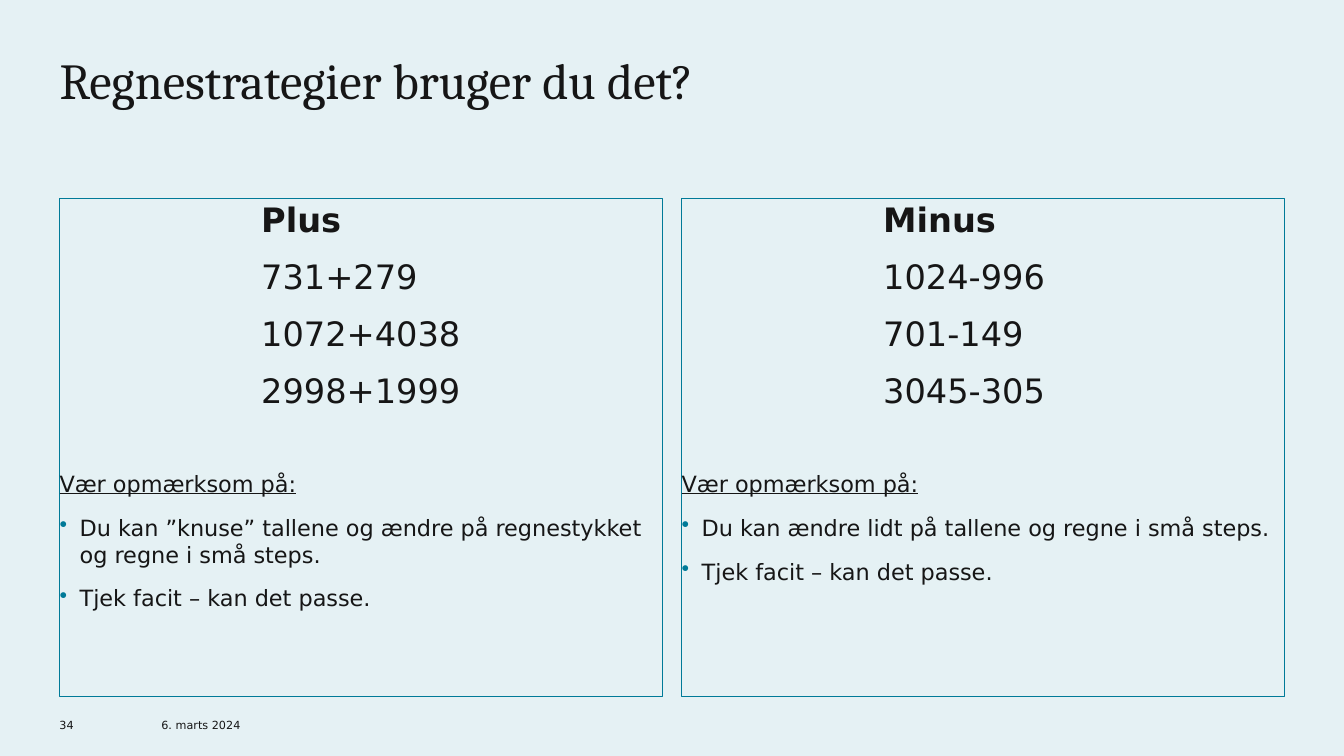
import dataclasses

import pptx
import pptx.dml.color
import pptx.enum.shapes
import pptx.enum.text
import pptx.oxml.ns
import pptx.slide
import pptx.text.text
import pptx.util
from lxml import etree
from pptx.util import Inches

INK = pptx.dml.color.RGBColor(0x16, 0x16, 0x16)
TEAL = pptx.dml.color.RGBColor(0x00, 0x7A, 0x98)
PALE = pptx.dml.color.RGBColor(0xE5, 0xF1, 0xF4)
SANS = "DejaVu Sans"
SERIF = "Cambria"
LEFT = 0.59
WIDTH = 5.98
GAP = 0.19


@dataclasses.dataclass
class Panel:
    head: str
    sums: list[str]
    tips: list[str]


@dataclasses.dataclass
class Label:
    text: str
    left: float
    top: float
    width: float
    height: float
    size: float
    face: str = SANS
    anchor: pptx.enum.text.MSO_ANCHOR = pptx.enum.text.MSO_ANCHOR.BOTTOM
    spacing: float = 1.0


PANELS = [
    Panel(
        "Plus",
        ["731+279", "1072+4038", "2998+1999"],
        [
            "Du kan ”knuse” tallene og ændre på regnestykket og regne i små steps.",
            "Tjek facit – kan det passe.",
        ],
    ),
    Panel(
        "Minus",
        ["1024-996", "701-149", "3045-305"],
        [
            "Du kan ændre lidt på tallene og regne i små steps.",
            "Tjek facit – kan det passe.",
        ],
    ),
]

LABELS = [
    Label("Regnestrategier bruger du det?", LEFT, 0.59, 10.12, 1.02, 36,
          SERIF, pptx.enum.text.MSO_ANCHOR.TOP, 0.83),
    Label("6. marts 2024", 1.6, 7.06, 1.39, 0.2, 8),
    Label("34", LEFT, 7.06, 0.3, 0.2, 8),
]


def set_frame(frame: pptx.text.text.TextFrame, anchor: pptx.enum.text.MSO_ANCHOR) -> None:
    frame.word_wrap = True
    frame.vertical_anchor = anchor
    frame.margin_left = frame.margin_right = 0
    frame.margin_top = frame.margin_bottom = 0


def set_font(para: pptx.text.text._Paragraph, size: float, face: str = SANS) -> None:
    para.alignment = pptx.enum.text.PP_ALIGN.LEFT
    para.font.size = pptx.util.Pt(size)
    para.font.name = face
    para.font.color.rgb = INK


def indent(para: pptx.text.text._Paragraph, left: float, first: float = 0) -> None:
    props = para._p.get_or_add_pPr()
    props.set("marL", str(Inches(left)))
    props.set("indent", str(Inches(first)))


def add_dot(para: pptx.text.text._Paragraph) -> None:
    indent(para, 0.2, -0.2)
    props = para._p.get_or_add_pPr()
    tint = etree.SubElement(props, pptx.oxml.ns.qn("a:buClr"))
    etree.SubElement(tint, pptx.oxml.ns.qn("a:srgbClr"), val=str(TEAL))
    etree.SubElement(props, pptx.oxml.ns.qn("a:buChar"), char="•")


def add_line(frame: pptx.text.text.TextFrame, text: str, before: float = 12) -> pptx.text.text._Paragraph:
    para = frame.add_paragraph()
    para.text = text
    para.space_before = pptx.util.Pt(before)
    return para


def draw_label(slide: pptx.slide.Slide, label: Label) -> None:
    box = slide.shapes.add_textbox(
        Inches(label.left), Inches(label.top), Inches(label.width), Inches(label.height))
    set_frame(box.text_frame, label.anchor)
    para = box.text_frame.paragraphs[0]
    para.text = label.text
    para.line_spacing = label.spacing
    set_font(para, label.size, label.face)


def draw_panel(slide: pptx.slide.Slide, panel: Panel, left: float) -> None:
    box = slide.shapes.add_shape(
        pptx.enum.shapes.MSO_SHAPE.RECTANGLE,
        Inches(left), Inches(1.97), Inches(WIDTH), Inches(4.94))
    box.shadow.inherit = False
    box.fill.background()
    box.line.color.rgb = TEAL
    box.line.width = pptx.util.Pt(0.75)
    frame = box.text_frame
    set_frame(frame, pptx.enum.text.MSO_ANCHOR.TOP)

    head = frame.paragraphs[0]
    head.text = panel.head
    head.font.bold = True
    for para in [head] + [add_line(frame, text) for text in panel.sums]:
        indent(para, 2)
        set_font(para, 24)

    note = add_line(frame, "Vær opmærksom på:", 43)
    set_font(note, 16)
    note.font.underline = True
    for tip in panel.tips:
        para = add_line(frame, tip)
        add_dot(para)
        set_font(para, 16)


def main() -> None:
    deck = pptx.Presentation()
    deck.slide_width = Inches(13.33)
    deck.slide_height = Inches(7.5)
    slide = deck.slides.add_slide(deck.slide_layouts[6])
    slide.background.fill.solid()
    slide.background.fill.fore_color.rgb = PALE
    for label in LABELS:
        draw_label(slide, label)
    for index, panel in enumerate(PANELS):
        draw_panel(slide, panel, LEFT + index * (WIDTH + GAP))
    deck.save("out.pptx")


if __name__ == "__main__":
    main()
